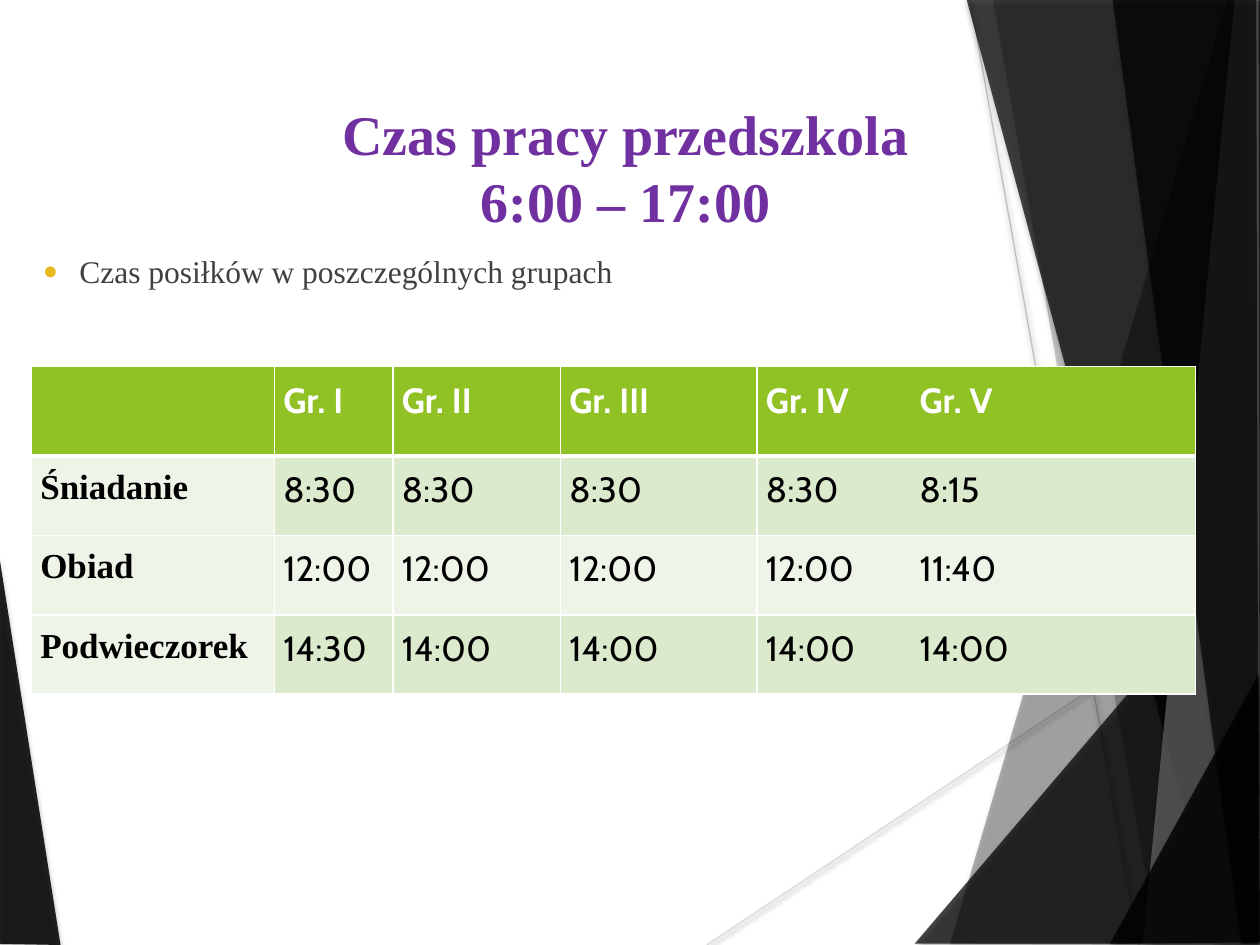
import dataclasses
import typing

import lxml.etree
import pptx
import pptx.dml.color
import pptx.enum.shapes
import pptx.enum.text
import pptx.oxml
import pptx.oxml.ns
import pptx.util

Inches = pptx.util.Inches
Point = tuple[float, float]

COLORS = {
    "black": "000000",
    "gray": "666666",
    "white": "FFFFFF",
    "purple": "7030A0",
    "text": "404040",
    "bullet": "E6B91E",
    "header": "90C226",
    "light": "EEF4E7",
    "band": "DBE9CC",
    "ray_light": "D9D9D9",
    "ray_dark": "BFBFBF",
}
SERIF = "Times New Roman"
SANS = "Cabin"


@dataclasses.dataclass
class Shadow:
    opacity: int
    blur: float
    distance: float


@dataclasses.dataclass
class Facet:
    points: list[Point]
    opacity: int
    color: str = "black"


@dataclasses.dataclass
class Ray:
    start: Point
    end: Point
    color: str


FACET_SHADOW = Shadow(35, 3, 2)
RAY_SHADOW = Shadow(38, 3.1, 1.6)

LEFT_FACET = Facet([(-0.01, 4.39), (0.48, 7.5), (-0.01, 7.49)], 85)
RAYS = [
    Ray((5.61, 7.5), (10.01, 4.57), "ray_light"),
    Ray((7.7, 0), (9.04, 7.5), "ray_dark"),
]
RIGHT_FACETS = [
    Facet([(9.74, 0), (7.54, 7.49), (10.01, 7.5), (10, 0.01)], 30),
    Facet([(7.88, -0.01), (9.19, 7.49), (10, 7.49), (10, -0.01)], 20),
    Facet([(7.26, 7.49), (9.99, 4.29), (10, 7.49)], 72),
    Facet([(7.67, -0.01), (9.69, 7.49), (10, 7.48), (10, -0.01)], 70),
    Facet([(9.8, -0.01), (9.07, 7.49), (10, 7.49), (9.99, -0.01)], 70, "gray"),
    Facet([(8.83, -0.01), (9.85, 7.49), (9.99, 7.49), (9.97, -0.01)], 65),
    Facet([(8.81, 7.49), (9.99, 5.35), (10, 7.48)], 80),
]

COLUMN_WIDTHS = [1.93, 0.94, 1.33, 1.56, 3.48]
ROW_HEIGHTS = [0.71, 0.63, 0.63, 0.63]
LAST_GROUP_TAB = 1.22
MEALS = [
    ["", "Gr. I", "Gr. II", "Gr. III", "Gr. IV\tGr. V"],
    ["Śniadanie", "8:30", "8:30", "8:30", "8:30\t8:15"],
    ["Obiad", "12:00", "12:00", "12:00", "12:00\t11:40"],
    ["Podwieczorek", "14:30", "14:00", "14:00", "14:00\t14:00"],
]


def rgb(color: str) -> pptx.dml.color.RGBColor:
    return pptx.dml.color.RGBColor.from_string(COLORS[color])


def add_child(parent: typing.Any, tag: str, **attributes: typing.Any) -> typing.Any:
    child = lxml.etree.SubElement(parent, pptx.oxml.ns.qn(tag))
    for name, value in attributes.items():
        child.set(name, str(value))
    return child


def add_shadow(shape: typing.Any, shadow: Shadow) -> None:
    effects = add_child(shape.element.spPr, "a:effectLst")
    outer = add_child(
        effects, "a:outerShdw", blurRad=pptx.util.Pt(shadow.blur),
        dist=pptx.util.Pt(shadow.distance), dir=90 * 60000, rotWithShape=0,
    )
    color = add_child(outer, "a:srgbClr", val=COLORS["black"])
    add_child(color, "a:alpha", val=shadow.opacity * 1000)


def add_facet(slide: typing.Any, facet: Facet) -> None:
    points = [(Inches(x), Inches(y)) for x, y in facet.points]
    builder = slide.shapes.build_freeform(*points[0])
    builder.add_line_segments(points[1:], close=True)
    shape = builder.convert_to_shape()
    shape.fill.solid()
    shape.fill.fore_color.rgb = rgb(facet.color)
    color = shape.element.spPr.find(".//" + pptx.oxml.ns.qn("a:srgbClr"))
    add_child(color, "a:alpha", val=facet.opacity * 1000)
    shape.line.fill.background()
    add_shadow(shape, FACET_SHADOW)


def add_ray(slide: typing.Any, ray: Ray) -> None:
    ends = [Inches(value) for value in ray.start + ray.end]
    connector = slide.shapes.add_connector(
        pptx.enum.shapes.MSO_CONNECTOR.STRAIGHT, *ends
    )
    connector.line.color.rgb = rgb(ray.color)
    connector.line.width = pptx.util.Pt(0.75)
    add_shadow(connector, RAY_SHADOW)


def format_font(font: typing.Any, name: str, size: int, bold: bool, color: str) -> None:
    values = {"name": name, "size": pptx.util.Pt(size), "bold": bold}
    for attribute, value in values.items():
        setattr(font, attribute, value)
    font.color.rgb = rgb(color)


def place_text(shape: typing.Any, box: tuple, text: str, anchor: typing.Any) -> typing.Any:
    for attribute, value in zip(("left", "top", "width", "height"), box):
        setattr(shape, attribute, Inches(value))
    frame = shape.text_frame
    frame.text = text
    frame_format = {
        "word_wrap": True,
        "auto_size": pptx.enum.text.MSO_AUTO_SIZE.NONE,
        "vertical_anchor": anchor,
    }
    for attribute, value in frame_format.items():
        setattr(frame, attribute, value)
    shape.element.getparent().append(shape.element)
    return frame.paragraphs[0]


def add_borders(cell: typing.Any, is_header: bool) -> None:
    properties = cell._tc.get_or_add_tcPr()
    for index, side in enumerate("LRTB"):
        width = 3 if is_header and side == "B" else 0.96
        line = pptx.oxml.parse_xml(
            f'<a:ln{side} {pptx.oxml.ns.nsdecls("a")} w="{pptx.util.Pt(width)}">'
            f'<a:solidFill><a:srgbClr val="{COLORS["white"]}"/></a:solidFill>'
            f"</a:ln{side}>"
        )
        properties.insert(index, line)


def fill_cell(cell: typing.Any, text: str, row: int, column: int) -> None:
    is_header = row == 0
    is_label = column == 0
    margins = {"margin_left": 0.07, "margin_right": 0.07,
               "margin_top": 0.05, "margin_bottom": 0.05}
    for attribute, value in margins.items():
        setattr(cell, attribute, Inches(value))
    cell.fill.solid()
    band = "band" if row % 2 and not is_label else "light"
    cell.fill.fore_color.rgb = rgb("header" if is_header else band)
    add_borders(cell, is_header)
    cell.text = text
    paragraph = cell.text_frame.paragraphs[0]
    paragraph.line_spacing = 1.15
    if "\t" in text:
        tabs = add_child(paragraph._p.get_or_add_pPr(), "a:tabLst")
        add_child(tabs, "a:tab", pos=Inches(LAST_GROUP_TAB), algn="l")
    format_font(paragraph.font, SERIF if is_label else SANS, 20,
                is_header or is_label, "white" if is_header else "black")
    for run in paragraph.runs:
        format_font(run.font, SERIF if is_label else SANS, 20,
                    is_header or is_label, "white" if is_header else "black")


def add_meal_table(slide: typing.Any) -> None:
    table = slide.shapes.add_table(
        len(ROW_HEIGHTS), len(COLUMN_WIDTHS), Inches(0.25), Inches(2.91),
        Inches(sum(COLUMN_WIDTHS)), Inches(sum(ROW_HEIGHTS)),
    ).table
    for column, width in zip(table.columns, COLUMN_WIDTHS):
        column.width = Inches(width)
    for row, height in zip(table.rows, ROW_HEIGHTS):
        row.height = Inches(height)
    for row, texts in enumerate(MEALS):
        for column, text in enumerate(texts):
            fill_cell(table.cell(row, column), text, row, column)


def main() -> None:
    presentation = pptx.Presentation()
    presentation.slide_width, presentation.slide_height = Inches(10), Inches(7.5)
    slide = presentation.slides.add_slide(presentation.slide_layouts[1])
    title, body = slide.placeholders
    add_facet(slide, LEFT_FACET)
    for ray in RAYS:
        add_ray(slide, ray)
    for facet in RIGHT_FACETS:
        add_facet(slide, facet)

    anchors = pptx.enum.text.MSO_ANCHOR
    heading = place_text(title, (0.47, 0.7, 8.99, 1.24),
                         "Czas pracy przedszkola\v6:00 – 17:00", anchors.MIDDLE)
    heading.alignment = pptx.enum.text.PP_ALIGN.CENTER
    for run in heading.runs:
        format_font(run.font, SERIF, 32, True, "purple")

    item = place_text(body, (0.23, 1.95, 8.99, 4.94),
                      "Czas posiłków w poszczególnych grupach", anchors.TOP)
    item.space_before = pptx.util.Pt(10)
    format_font(item.runs[0].font, SERIF, 18, False, "text")
    properties = item._p.get_or_add_pPr()
    properties.set("marL", str(Inches(0.3)))
    properties.set("indent", str(Inches(-0.29)))
    bullet_color = add_child(properties, "a:buClr")
    add_child(bullet_color, "a:srgbClr", val=COLORS["bullet"])
    add_child(properties, "a:buSzPct", val=80000)
    add_child(properties, "a:buChar", char="●")

    add_meal_table(slide)
    presentation.save("out.pptx")


if __name__ == "__main__":
    main()
